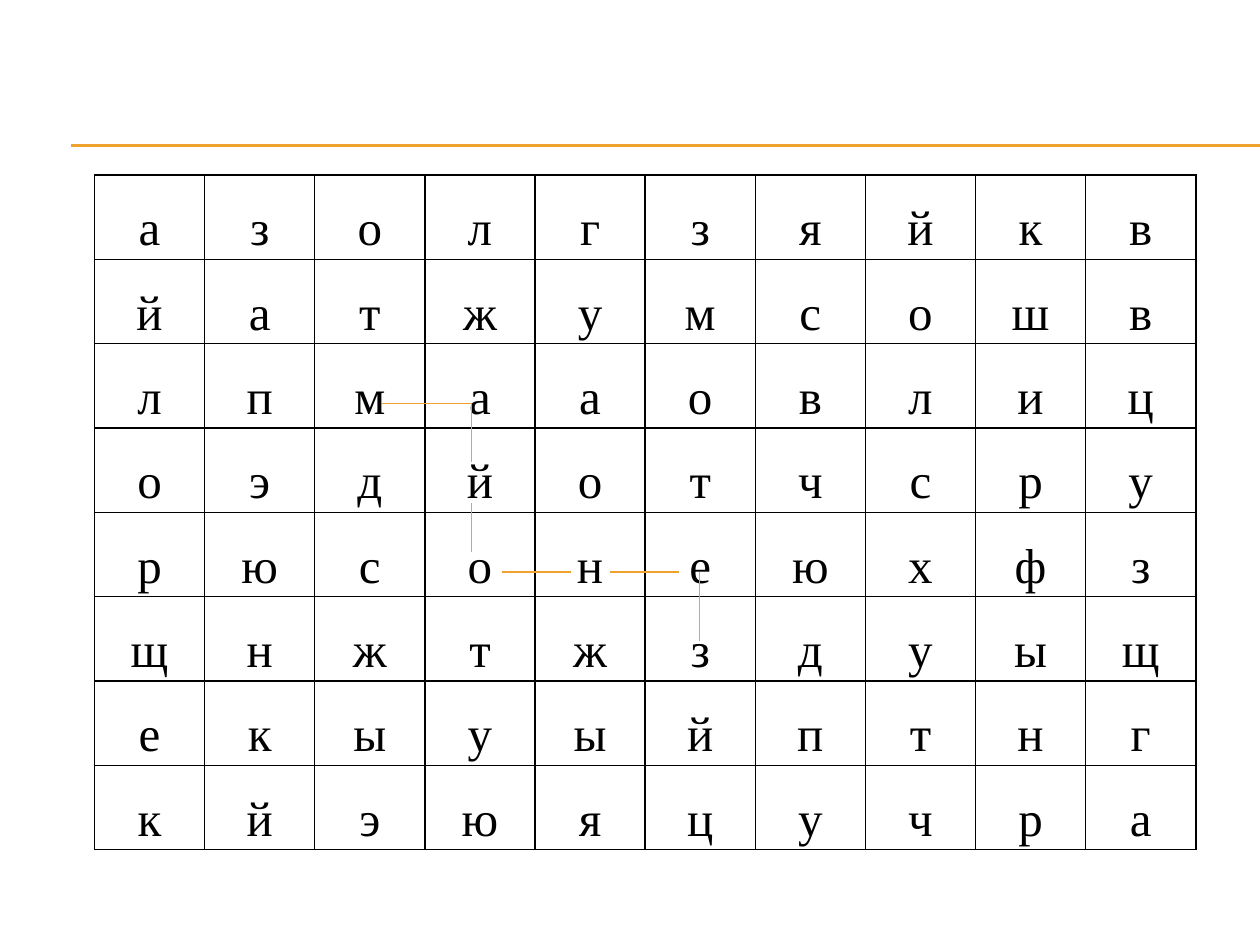
from lxml import etree
from pptx import Presentation
from pptx.dml.color import RGBColor
from pptx.enum.shapes import MSO_CONNECTOR
from pptx.enum.text import PP_ALIGN
from pptx.oxml.ns import qn
from pptx.util import Pt

STRAIGHT = MSO_CONNECTOR.STRAIGHT
CENTER = PP_ALIGN.CENTER

LETTERS = [
    "азолгзяйкв",
    "йатжумсошв",
    "лпмааовлиц",
    "оэдйотчсру",
    "рюсонеюхфз",
    "щнжтжздуыщ",
    "екыуыйптнг",
    "кйэюяцучра",
]

WORD_PATH = [
    (218.2, 230.4, 269.3, 230.4),
    (269.3, 230.4, 269.3, 264.2),
    (269.3, 287.3, 269.3, 315.4),
    (286.6, 326.9, 326.2, 326.9),
    (348.5, 326.9, 388.1, 326.9),
    (399.6, 326.9, 399.6, 366.5),
]


def rgb(color):
    return RGBColor.from_string(color)


class SlideBuilder:
    font = "Times New Roman"
    size = 28
    ink = "000000"
    accent = "F0A22E"

    def __init__(self, slide):
        self.slide = slide

    def line(self, x1, y1, x2, y2, width):
        c = self.slide.shapes.add_connector(
            STRAIGHT, Pt(x1), Pt(y1), Pt(x2), Pt(y2))
        c.line.color.rgb = rgb(self.accent)
        c.line.width = Pt(width)
        etree.SubElement(c._element.spPr, qn("a:effectLst"))

    def borders(self, cell, width=1):
        tcPr = cell._tc.get_or_add_tcPr()
        for i, side in enumerate(("lnL", "lnR", "lnT", "lnB")):
            ln = etree.Element(qn("a:" + side), w=str(Pt(width)))
            fill = etree.SubElement(ln, qn("a:solidFill"))
            etree.SubElement(fill, qn("a:srgbClr"), val=self.ink)
            tcPr.insert(i, ln)

    def cell(self, cell, text):
        cell.fill.background()
        self.borders(cell)
        cell.margin_left = cell.margin_right = Pt(5)
        cell.margin_top = cell.margin_bottom = 0
        p = cell.text_frame.paragraphs[0]
        p.text = text
        p.alignment = CENTER
        p.line_spacing = 1.5
        font = p.runs[0].font
        font.name = self.font
        font.size = Pt(self.size)
        font.color.rgb = rgb(self.ink)

    def letter_grid(self, rows, left, top, col_width, row_height):
        n_rows, n_cols = len(rows), len(rows[0])
        table = self.slide.shapes.add_table(
            n_rows, n_cols, Pt(left), Pt(top),
            Pt(col_width * n_cols), Pt(row_height * n_rows)).table
        table.first_row = table.horz_banding = False
        for col in table.columns:
            col.width = Pt(col_width)
        for row, letters in zip(table.rows, rows):
            row.height = Pt(row_height)
            for cell, letter in zip(row.cells, letters):
                self.cell(cell, letter)


def main():
    prs = Presentation()
    prs.slide_width, prs.slide_height = Pt(720), Pt(540)
    s = SlideBuilder(prs.slides.add_slide(prs.slide_layouts[6]))
    for y in (82.8, 83.5):
        s.line(40.5, y, 720, y, 0.75)
    s.letter_grid(LETTERS, 54, 100, 62.93, 48.2)
    for segment in WORD_PATH:
        s.line(*segment, 0.79)
    prs.save("out.pptx")


if __name__ == "__main__":
    main()
